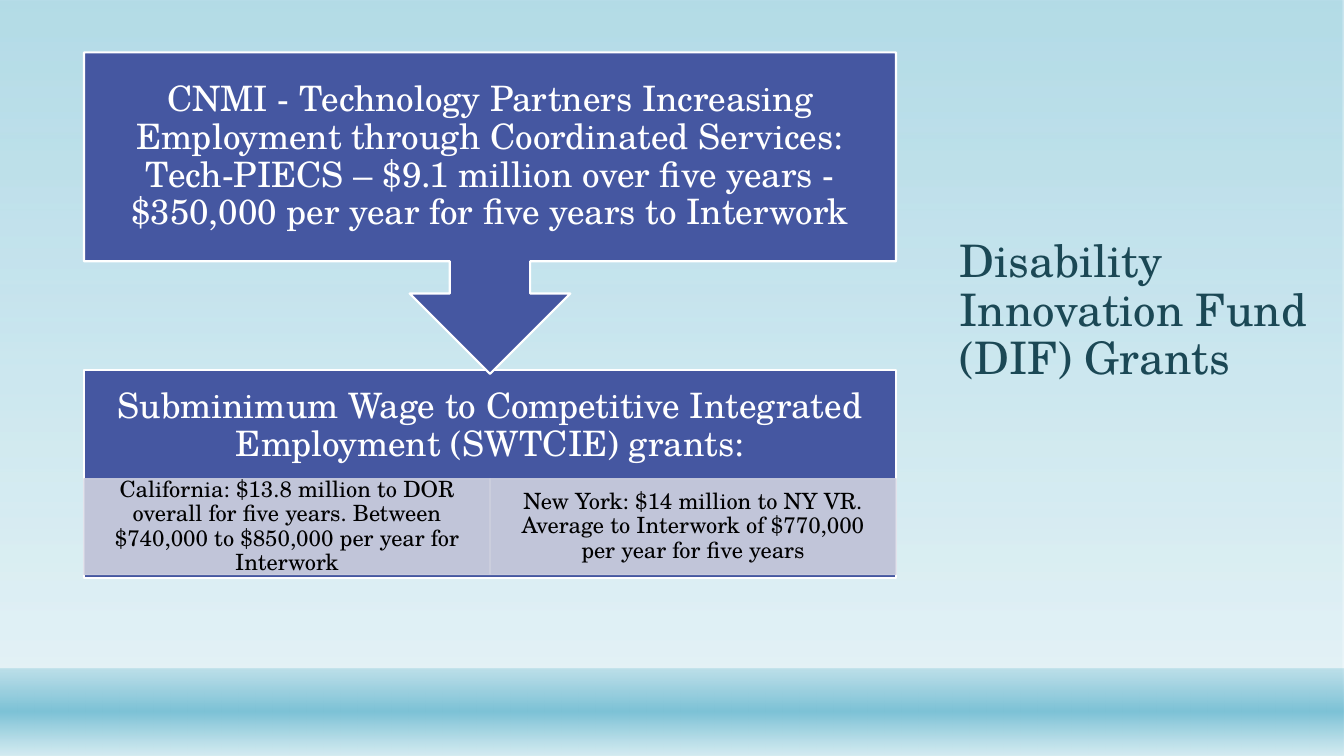
from dataclasses import dataclass

from lxml.etree import SubElement
from pptx import Presentation
from pptx.dml.color import RGBColor
from pptx.enum.shapes import MSO_SHAPE as Preset
from pptx.enum.text import MSO_ANCHOR as Anchor, MSO_AUTO_SIZE as AutoSize, PP_ALIGN as Align
from pptx.oxml.ns import qn
from pptx.util import Pt

TITLE = "Disability Innovation Fund (DIF) Grants"
CNMI_GRANT = (
    "CNMI - Technology Partners Increasing Employment through Coordinated "
    "Services: Tech-PIECS – $9.1 million over five years - "
    "$350,000 per year for five years to Interwork"
)
SWTCIE_GRANTS = "Subminimum Wage to Competitive Integrated Employment (SWTCIE) grants:"
STATES = [
    "California: $13.8 million to DOR overall for five years. "
    "Between $740,000 to $850,000 per year for Interwork",
    "New York: $14 million to NY VR. Average to Interwork of $770,000 "
    "per year for five years",
]


@dataclass(frozen=True)
class Theme:
    font: str = "TeX Gyre Schola"
    title_size: float = 32
    grant_size: float = 25
    state_size: float = 16
    title: str = "1B4855"
    grant: str = "4557A1"
    state: str = "CFD1E0"
    white: str = "FFFFFF"
    black: str = "000000"
    # Gradient stops: position, colour, opacity, the last two in percent terms
    sky: tuple = ((0, "7DC2D6", 58), (88, "D4EBF1", 65))
    sea: tuple = ((1, "7DC2D6", 38), (49, "7DC2D6", 100), (100, "D4EBF1", 89))


THEME = Theme()
SLIDE_W, SLIDE_H = 960, 540
SEA_TOP = 477.4
LEFT, DIAGRAM_W = 60, 580
CALLOUT_TOP, CALLOUT_H = 37.4, 229.7
GRANTS_TOP, GRANTS_H, HEADING_H = 264.2, 149, 80.6
STATES_TOP, STATES_H = 342, 68.4
GRANT_INSET = 13.7
STATE_INSETS = (8.6, 1.4, 8.6, 1.4)


def set_opacity(colour, percent):
    SubElement(colour, qn("a:alpha")).set("val", str(percent * 1000))


def add_band(slide, top, height, stops):
    """Add a full-width band with a top-to-bottom gradient."""
    band = slide.shapes.add_shape(Preset.RECTANGLE, 0, Pt(top), Pt(SLIDE_W), Pt(height))
    gradient = SubElement(band._element.spPr, qn("a:gradFill"), rotWithShape="1")
    stop_list = SubElement(gradient, qn("a:gsLst"))
    for position, colour, opacity in stops:
        stop = SubElement(stop_list, qn("a:gs"), pos=str(position * 1000))
        set_opacity(SubElement(stop, qn("a:srgbClr"), val=colour), opacity)
    SubElement(gradient, qn("a:lin"), ang="5400000", scaled="0")
    band.line.fill.background()
    band.shadow.inherit = False


def write(shape, text, size, colour, align, anchor):
    frame = shape.text_frame
    frame.text = text
    frame.word_wrap = True
    frame.auto_size = AutoSize.NONE
    frame.vertical_anchor = anchor
    paragraph = frame.paragraphs[0]
    paragraph.alignment = align
    paragraph.line_spacing = 0.9
    font = paragraph.runs[0].font
    font.name, font.size = THEME.font, Pt(size)
    font.color.rgb = RGBColor.from_string(colour)


def add_box(slide, preset, box, text, size, ink, fill, line, line_width, insets, opacity=100):
    shape = slide.shapes.add_shape(preset, *map(Pt, box))
    shape.shadow.inherit = False
    shape.fill.solid()
    shape.fill.fore_color.rgb = RGBColor.from_string(fill)
    shape.line.color.rgb = RGBColor.from_string(line)
    shape.line.width = Pt(line_width)
    if opacity < 100:
        for colour in shape._element.spPr.iter(qn("a:srgbClr")):
            set_opacity(colour, opacity)
    write(shape, text, size, ink, Align.CENTER, Anchor.MIDDLE)
    frame = shape.text_frame
    frame.margin_left, frame.margin_top, frame.margin_right, frame.margin_bottom = map(Pt, insets)


def add_grant(slide, preset, top, height, text, space_below=0):
    """Add a blue grant box, keeping its text clear of space_below."""
    insets = (GRANT_INSET,) * 3 + (GRANT_INSET + space_below,)
    add_box(slide, preset, (LEFT, top, DIAGRAM_W, height), text, THEME.grant_size,
            THEME.white, THEME.grant, THEME.white, 1.5, insets)


def main():
    deck = Presentation()
    deck.slide_width, deck.slide_height = Pt(SLIDE_W), Pt(SLIDE_H)
    slide = deck.slides.add_slide(deck.slide_layouts[5])

    add_band(slide, 0, SLIDE_H, THEME.sky)
    add_band(slide, SEA_TOP, SLIDE_H - SEA_TOP, THEME.sea)

    title = slide.shapes.title
    slide.shapes._spTree.append(title._element)  # in front of the bands
    title.left, title.top, title.width, title.height = map(Pt, (678.2, 62, 265.7, 216))
    write(title, TITLE, THEME.title_size, THEME.title, Align.LEFT, Anchor.BOTTOM)

    add_grant(slide, Preset.RECTANGLE, GRANTS_TOP, GRANTS_H, SWTCIE_GRANTS,
              GRANTS_H - HEADING_H)
    state_w = DIAGRAM_W / len(STATES)
    for column, state in enumerate(STATES):
        add_box(slide, Preset.RECTANGLE,
                (LEFT + column * state_w, STATES_TOP, state_w, STATES_H),
                state, THEME.state_size, THEME.black, THEME.state, THEME.state, 1,
                STATE_INSETS, opacity=90)
    add_grant(slide, Preset.DOWN_ARROW_CALLOUT, CALLOUT_TOP, CALLOUT_H, CNMI_GRANT)

    deck.save("out.pptx")


if __name__ == "__main__":
    main()
